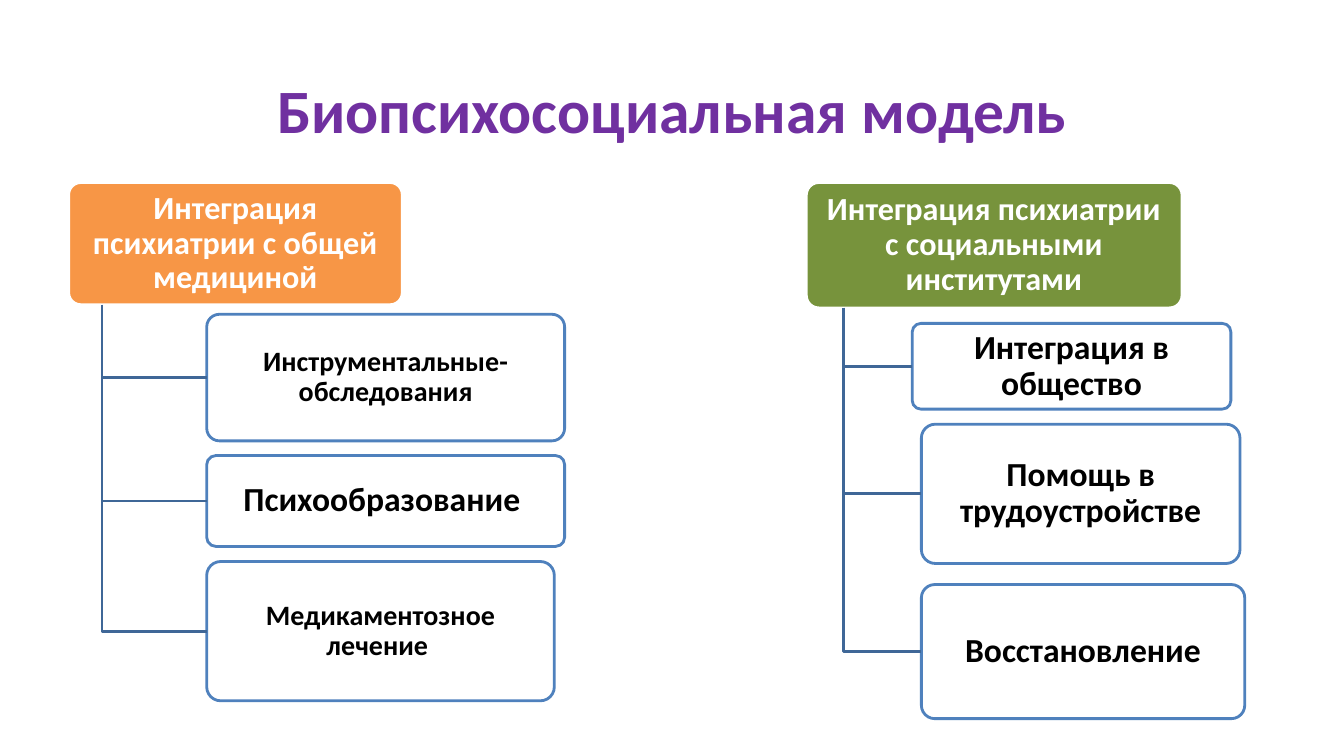
"""Build the slide on the biopsychosocial model with its two branching trees."""
from dataclasses import dataclass

from pptx import Presentation
from pptx import util as u
from pptx.dml.color import RGBColor
from pptx.enum import shapes, text
from pptx.shapes.autoshape import Shape
from pptx.slide import Slide
from pptx.text.text import TextFrame

COLORS = {
    "title": "7030A0",
    "medicine": "F79646",
    "society": "77933C",
    "white": "FFFFFF",
    "black": "000000",
    "border": "4F81BD",
    "branch": "3F6797",
}
FONT = "Calibri"
LINE_WIDTH = u.Pt(2)


@dataclass(frozen=True)
class Box:
    """A rounded box, measured in centimetres."""

    wording: str
    left: float
    top: float
    width: float
    height: float
    size: int
    fill: str = "white"
    border: str = "border"
    ink: str = "black"


@dataclass(frozen=True)
class Tree:
    """A heading box with the boxes that branch from it."""

    heading: Box
    leaves: tuple[Box, ...]


TREES = (
    Tree(
        Box("Интеграция психиатрии с общей медициной",
            1.73, 4.6, 8.41, 3.08, 23, "medicine", "white", "white"),
        (
            Box("Инструментальные-обследования", 5.21, 7.92, 9.02, 3.19, 20),
            Box("Психообразование ", 5.21, 11.48, 9.02, 2.29, 24),
            Box("Медикаментозное лечение ", 5.21, 14.15, 8.76, 3.51, 20),
        ),
    ),
    Tree(
        Box("Интеграция психиатрии с социальными институтами",
            20.32, 4.6, 9.47, 3.16, 23, "society", "white", "white"),
        (
            Box("Интеграция в общество", 22.99, 8.15, 8.03, 2.16, 24),
            Box("Помощь в трудоустройстве", 23.22, 10.69, 8.03, 3.51, 24),
            Box("Восстановление", 23.22, 14.73, 8.15, 3.38, 24),
        ),
    ),
)


def rgb(name: str) -> RGBColor:
    """Look up a named colour."""
    return RGBColor.from_string(COLORS[name])


def write(frame: TextFrame, wording: str, size: int, ink: str) -> None:
    """Set bold, centred wording in a frame."""
    frame.text = wording
    frame.word_wrap = True
    frame.auto_size = text.MSO_AUTO_SIZE.NONE
    frame.vertical_anchor = text.MSO_ANCHOR.MIDDLE
    paragraph = frame.paragraphs[0]
    paragraph.alignment = text.PP_ALIGN.CENTER
    paragraph.line_spacing = 0.9
    font = paragraph.runs[0].font
    font.name, font.size, font.bold = FONT, u.Pt(size), True
    font.color.rgb = rgb(ink)


def outline(shape: Shape, color: str) -> None:
    """Give a shape a plain line without a shadow."""
    shape.shadow.inherit = False
    shape.line.color.rgb = rgb(color)
    shape.line.width = LINE_WIDTH


def draw_box(slide: Slide, box: Box) -> Shape:
    """Draw one rounded box with its wording."""
    shape = slide.shapes.add_shape(
        shapes.MSO_SHAPE.ROUNDED_RECTANGLE,
        u.Cm(box.left), u.Cm(box.top), u.Cm(box.width), u.Cm(box.height))
    shape.adjustments[0] = 0.1
    shape.fill.solid()
    shape.fill.fore_color.rgb = rgb(box.fill)
    outline(shape, box.border)
    frame = shape.text_frame
    frame.margin_left = frame.margin_right = u.Cm(0.22)
    frame.margin_top = frame.margin_bottom = u.Cm(0.17)
    write(frame, box.wording, box.size, box.ink)
    return shape


def draw_branch(slide: Slide, heading: Shape, leaf: Shape) -> None:
    """Draw the angled line from under a heading to the side of a leaf."""
    trunk = heading.left + heading.width // 10
    middle = leaf.top + leaf.height // 2
    builder = slide.shapes.build_freeform(trunk, heading.top + heading.height)
    builder.add_line_segments([(trunk, middle), (leaf.left, middle)], close=False)
    branch = builder.convert_to_shape()
    branch.fill.background()
    outline(branch, "branch")


def draw_tree(slide: Slide, tree: Tree) -> None:
    """Draw a heading, its leaves and the branches between them."""
    heading = draw_box(slide, tree.heading)
    for box in tree.leaves:
        draw_branch(slide, heading, draw_box(slide, box))


def main() -> None:
    """Build and save the presentation."""
    deck = Presentation()
    deck.slide_width, deck.slide_height = u.Cm(33.87), u.Cm(19.05)
    slide = deck.slides.add_slide(deck.slide_layouts.get_by_name("Title Only"))
    title = slide.shapes.title
    title.left, title.top = u.Cm(2.34), u.Cm(1.02)
    title.width, title.height = u.Cm(29.21), u.Cm(3.68)
    write(title.text_frame, "Биопсихосоциальная модель", 44, "title")
    for tree in TREES:
        draw_tree(slide, tree)
    deck.save("out.pptx")


if __name__ == "__main__":
    main()
